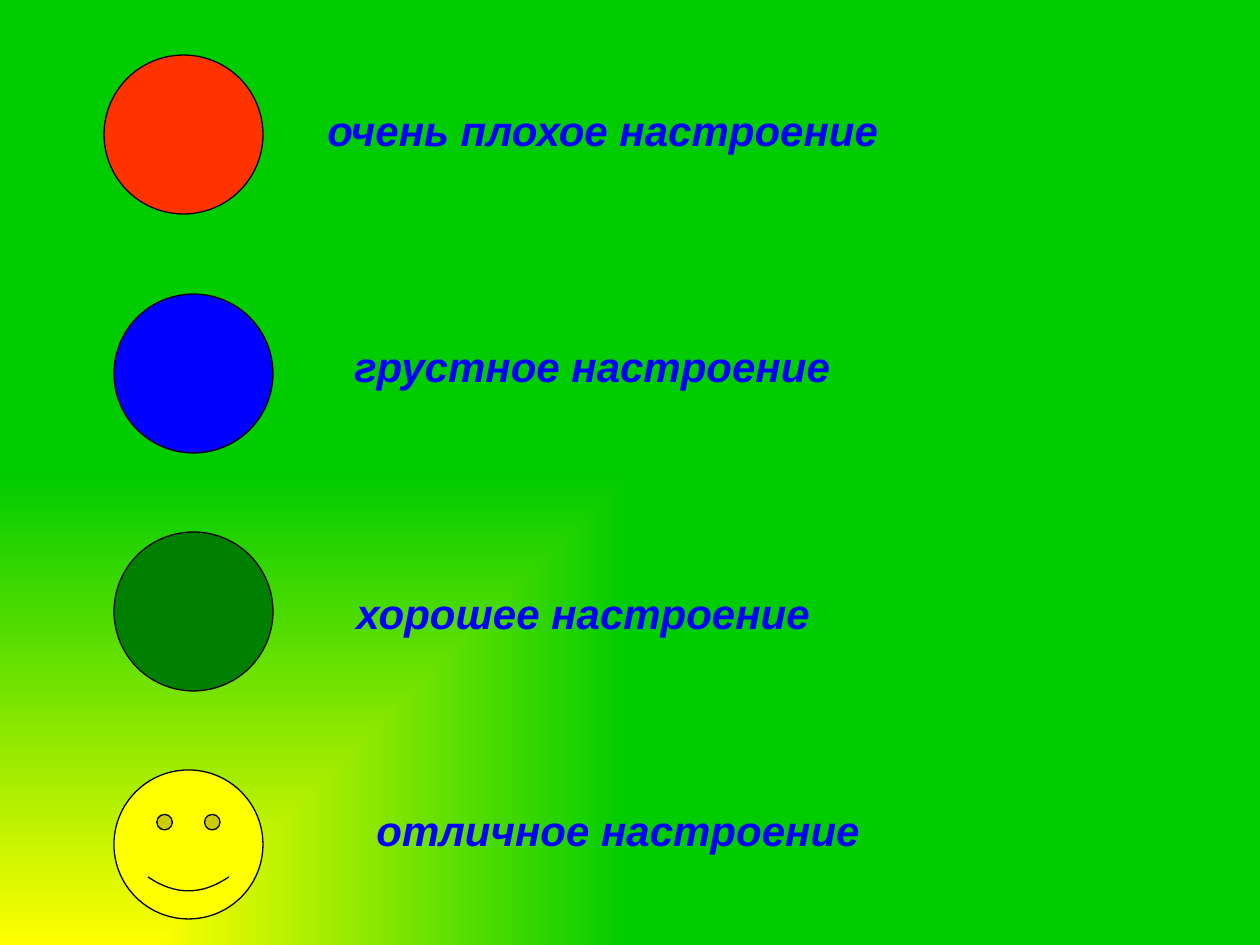
"""Build a mood scale slide: four coloured faces with their captions."""
from dataclasses import dataclass

from lxml import etree
from pptx import Presentation
from pptx import util as u
from pptx.dml.color import RGBColor
from pptx.enum import shapes, text
from pptx.oxml import ns


@dataclass(frozen=True)
class Theme:
    font: str = "Arial"
    caption_size: int = 24
    caption: str = "0000FF"
    outline: str = "000000"
    outline_width: float = 0.75
    glow: str = "FFFF00"
    ground: str = "00CC00"


theme = Theme()
PX = u.Inches(1) / 126
CIRCLE, SMILEY = shapes.MSO_SHAPE.OVAL, shapes.MSO_SHAPE.SMILEY_FACE


def px(*lengths):
    return [u.Emu(round(length * PX)) for length in lengths]


def add_caption(page, words, *, left, top, width, height=63, wrap=False):
    box = page.shapes.add_textbox(*px(left, top, width, height))
    box.text_frame.word_wrap = wrap
    box.text_frame.auto_size = text.MSO_AUTO_SIZE.SHAPE_TO_FIT_TEXT
    span = box.text_frame.paragraphs[0].add_run()
    span.text = words
    span.font.name = theme.font
    span.font.size = u.Pt(theme.caption_size)
    span.font.bold = span.font.italic = True
    span.font.color.rgb = RGBColor.from_string(theme.caption)


deck = Presentation()
deck.slide_width, deck.slide_height = px(1260, 945)
page = deck.slides.add_slide(deck.slide_layouts[6])

ground = page.background.fill
ground.gradient()
for stop, colour, position in zip(ground.gradient_stops, (theme.glow, theme.ground), (0, 1)):
    stop.color.rgb = RGBColor.from_string(colour)
    stop.position = position
gradient = page.element.find(".//" + ns.qn("a:gradFill"))
gradient.remove(gradient.find(ns.qn("a:lin")))
spread = etree.SubElement(gradient, ns.qn("a:path"), path="rect")
etree.SubElement(spread, ns.qn("a:fillToRect"), t="100000", r="100000")

moods = [
    (CIRCLE, "FF3300", (104, 55, 159),
     "очень плохое настроение", dict(left=315, top=98, width=586, wrap=True)),
    (CIRCLE, "0000FF", (114, 294, 159),
     "грустное настроение", dict(left=342, top=334, width=502)),
    (CIRCLE, "008000", (114, 532, 159),
     "хорошее настроение", dict(left=344, top=581, width=480)),
    (SMILEY, "FFFF00", (114, 770, 149),
     "отличное настроение", dict(left=364, top=798, width=509)),
]
for kind, colour, (left, top, size), words, place in moods:
    face = page.shapes.add_shape(kind, *px(left, top, size, size))
    face.shadow.inherit = False
    face.fill.solid()
    face.fill.fore_color.rgb = RGBColor.from_string(colour)
    face.line.color.rgb = RGBColor.from_string(theme.outline)
    face.line.width = u.Pt(theme.outline_width)
    add_caption(page, words, **place)

deck.save("out.pptx")
